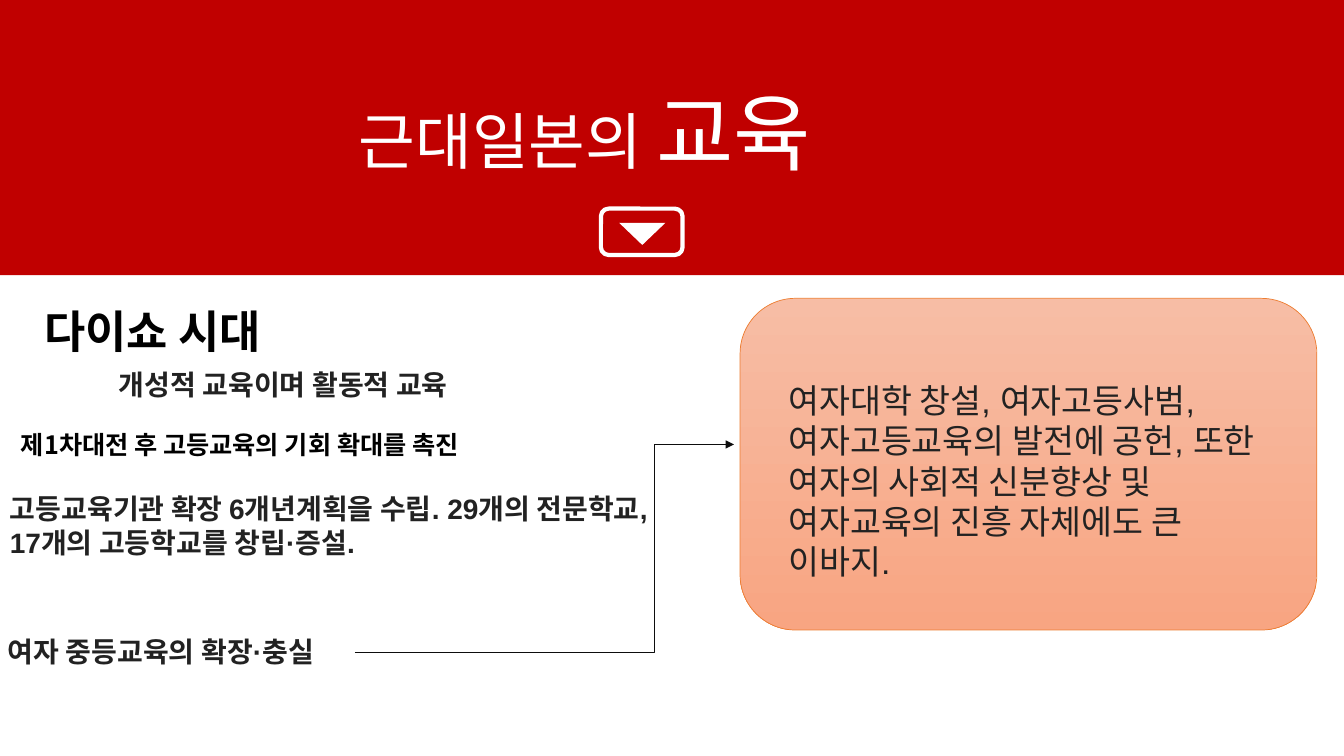
from lxml import etree
from pptx import Presentation
from pptx.dml.color import RGBColor
from pptx.enum.shapes import MSO_CONNECTOR, MSO_SHAPE
from pptx.enum.text import MSO_ANCHOR, MSO_AUTO_SIZE
from pptx.oxml.ns import qn
from pptx.util import Inches, Pt

RECT = MSO_SHAPE.RECTANGLE
ROUNDED = MSO_SHAPE.ROUNDED_RECTANGLE
TRIANGLE = MSO_SHAPE.ISOSCELES_TRIANGLE
ELBOW = MSO_CONNECTOR.ELBOW
MIDDLE = MSO_ANCHOR.MIDDLE
GROW = MSO_AUTO_SIZE.SHAPE_TO_FIT_TEXT

NOTO = "Noto Sans CJK KR"
ARIAL = "Arial"
RED, WHITE, BLACK, GRAY = "C00000", "FFFFFF", "000000", "222222"
ORANGE, PEACH, SALMON = "ED7D31", "F7BDA5", "F8A582"

# left, top, width, height, text, size, font, colour, wraps
NOTES = [
    (0.34, 2.96, 6.26, 0.64, "다이쇼 시대", 32, NOTO, BLACK, True),
    (1.08, 3.6, 3.81, 0.44, "개성적 교육이며 활동적 교육", 20, ARIAL, GRAY, False),
    (0.11, 4.21, 6.67, 0.4, "제1차대전 후 고등교육의 기회 확대를 촉진", 18, NOTO, BLACK, True),
    (0, 4.83, 6.67, 0.77,
     "고등교육기관 확장 6개년계획을 수립. 29개의 전문학교, 17개의 고등학교를 창립·증설.",
     20, ARIAL, GRAY, True),
    (-0.02, 6.25, 3.53, 0.44, "여자 중등교육의 확장·충실", 20, ARIAL, GRAY, False),
]
PANEL_TEXT = ("여자대학 창설, 여자고등사범, 여자고등교육의 발전에 공헌, 또한 "
              "여자의 사회적 신분향상 및 여자교육의 진흥 자체에도 큰 이바지.")


def rgb(value):
    return RGBColor.from_string(value)


def set_font(font, size, name, color, bold=False):
    """Set a font, with the Korean face for East Asian letters."""
    font.size, font.name, font.bold = Pt(size), name, bold
    font.color.rgb = rgb(color)
    latin = font._element.find(qn("a:latin"))
    ea = etree.Element(qn("a:ea"), typeface=NOTO)
    latin.addnext(ea)


def add_shape(shapes, kind, x, y, w, h, fill=None, line=None, weight=1):
    sp = shapes.add_shape(kind, Inches(x), Inches(y), Inches(w), Inches(h))
    sp.shadow.inherit = False
    if fill:
        sp.fill.solid()
        sp.fill.fore_color.rgb = rgb(fill)
    else:
        sp.fill.background()
    if line:
        sp.line.color.rgb = rgb(line)
        sp.line.width = Pt(weight)
    else:
        sp.line.fill.background()
    return sp


def add_text(shapes, x, y, w, h, text, size, font, color, wraps=True, bold=False):
    sp = shapes.add_textbox(Inches(x), Inches(y), Inches(w), Inches(h))
    tf = sp.text_frame
    tf.word_wrap, tf.auto_size = wraps, GROW
    p = tf.paragraphs[0]
    p.text = text
    set_font(p.font, size, font, color, bold)


def add_header(shapes, x, y, w, h):
    """Red band with the title and a down-arrow button."""
    add_shape(shapes, RECT, x, y, w, h, fill=RED)
    sp = shapes.add_textbox(Inches(x + 2.63), Inches(y + 0.37), Inches(10.18), Inches(1.86))
    tf = sp.text_frame
    tf.word_wrap, tf.vertical_anchor = True, MIDDLE
    tf.margin_left = Inches(0.93)
    p = tf.paragraphs[0]
    for text, size in (("근대일본의 ", 44), ("교육", 60)):
        r = p.add_run()
        r.text = text
        set_font(r.font, size, NOTO, WHITE)
    arrow = add_shape(shapes, TRIANGLE, x + 6.14, y + 2.21, 0.46, 0.22, fill=WHITE)
    arrow.rotation = 180
    add_shape(shapes, ROUNDED, x + 5.96, y + 2.07, 0.81, 0.46, line=WHITE, weight=3)


def add_notes(shapes):
    for note in NOTES:
        add_text(shapes, *note, bold=True)


def add_elbow_arrow(shapes, x1, y1, x2, y2, bend):
    """Elbow arrow that turns at the given share of its width."""
    line = shapes.add_connector(ELBOW, Inches(x1), Inches(y1), Inches(x2), Inches(y2))
    line.line.color.rgb = rgb("0D0D0D")
    line.line.width = Pt(0.5)
    props = line._element.spPr
    guides = props.find(qn("a:prstGeom")).get_or_add_avLst()
    etree.SubElement(guides, qn("a:gd"), name="adj1", fmla=f"val {round(bend * 100000)}")
    etree.SubElement(props.find(qn("a:ln")), qn("a:tailEnd"), type="triangle")
    etree.SubElement(props, qn("a:effectLst"))


def add_panel(shapes, x, y, w, h):
    """Rounded gradient panel with its text."""
    group = shapes.add_group_shape().shapes
    sp = add_shape(group, ROUNDED, x, y, w, h, line=ORANGE, weight=0.5)
    sp.fill.gradient()
    sp.fill.gradient_angle = 270
    for stop, color in zip(sp.fill.gradient_stops, (PEACH, SALMON)):
        stop.color.rgb = rgb(color)
    add_text(group, x + 0.38, y + 0.76, w - 0.67, 1.72, PANEL_TEXT, 24, ARIAL, GRAY)


def main():
    prs = Presentation()
    prs.slide_width, prs.slide_height = Inches(13.33), Inches(7.5)
    s = prs.slides.add_slide(prs.slide_layouts[6])
    add_header(s.shapes, 0, 0, 13.33, 2.73)
    add_notes(s.shapes)
    add_elbow_arrow(s.shapes, 3.52, 6.47, 7.28, 4.41, bend=0.79)
    add_panel(s.shapes, 7.34, 2.96, 5.72, 3.29)
    prs.save("out.pptx")


if __name__ == "__main__":
    main()
